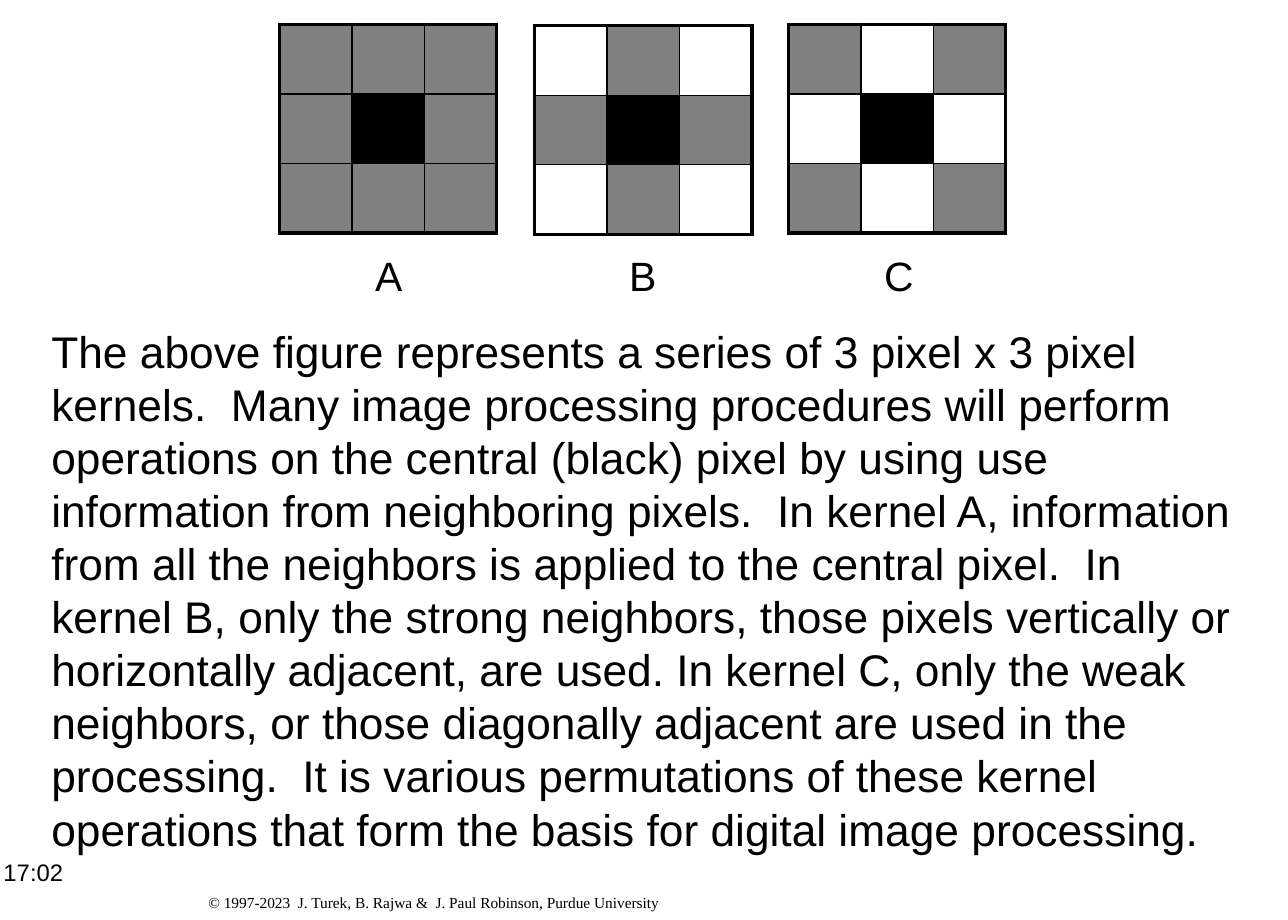
from lxml import etree
from pptx import Presentation
from pptx.dml.color import RGBColor
from pptx.enum.text import MSO_AUTO_SIZE
from pptx.oxml.ns import qn
from pptx.util import Emu, Pt

PX = 9144  # 100 px to the inch
FIT_SHAPE = MSO_AUTO_SIZE.SHAPE_TO_FIT_TEXT
BLACK, GRAY = "000000", "808080"
COLORS = {"K": BLACK, "G": GRAY, "-": None}
KERNEL_SIZE = (177, 170)
THICK, THIN = 2.25, 1

# Label, table position, label box, rows of pixels
KERNELS = [
    ("A", (228, 20), (296, 199, 42, 50), ["GGG", "GKG", "GGG"]),
    ("B", (436, 21), (503, 199, 42, 50), ["-G-", "GKG", "-G-"]),
    ("C", (643, 20), (711, 199, 44, 50), ["G-G", "-K-", "G-G"]),
]
EXPLANATION = (
    "The above figure represents a series of 3 pixel x 3 pixel kernels.  "
    "Many image processing procedures will perform operations on the central "
    "(black) pixel by using use information from neighboring pixels.  "
    "In kernel A, information from all the neighbors is applied to the central "
    "pixel.  In kernel B, only the strong neighbors, those pixels vertically or "
    "horizontally adjacent, are used. In kernel C, only the weak neighbors, or "
    "those diagonally adjacent are used in the processing.  It is various "
    "permutations of these kernel operations that form the basis for digital "
    "image processing."
)
COPYRIGHT = "© 1997-2023  J. Turek, B. Rajwa &  J. Paul Robinson, Purdue University"


def px(length):
    return Emu(length * PX)


def color(value):
    return RGBColor.from_string(value)


def add_text(slide, box, text, size, font="Arial", wrap=False):
    shape = slide.shapes.add_textbox(*map(px, box))
    frame = shape.text_frame
    frame.word_wrap = wrap
    frame.auto_size = FIT_SHAPE
    run = frame.paragraphs[0].add_run()
    run.text = text
    run.font.size = Pt(size)
    run.font.name = font
    run.font.color.rgb = color(BLACK)


def set_borders(cell, widths):
    """Put left, right, top and bottom lines before the fill of the cell."""
    properties = cell._tc.get_or_add_tcPr()
    for index, (side, width) in enumerate(widths.items()):
        line = etree.Element(qn(f"a:ln{side}"), w=str(Pt(width)))
        fill = etree.SubElement(line, qn("a:solidFill"))
        etree.SubElement(fill, qn("a:srgbClr"), val=BLACK)
        properties.insert(index, line)


def add_kernel(slide, box, pixels):
    """Add a square table whose equal cells fill the box."""
    count = len(pixels)
    last = count - 1
    frame = slide.shapes.add_table(count, count, *map(px, box))
    table = frame.table
    table.first_row = table.horz_banding = False
    for row, line in enumerate(pixels):
        for column, code in enumerate(line):
            cell = table.cell(row, column)
            if COLORS[code]:
                cell.fill.solid()
                cell.fill.fore_color.rgb = color(COLORS[code])
            else:
                cell.fill.background()
            edges = {"L": column == 0, "R": column == last,
                     "T": row == 0, "B": row == last}
            set_borders(cell, {side: THICK if outer else THIN
                               for side, outer in edges.items()})


def add_kernel_slide(presentation):
    slide = presentation.slides.add_slide(presentation.slide_layouts[6])
    add_text(slide, (160, 723, 392, 25), COPYRIGHT, 9, "Times New Roman")
    add_text(slide, (-7, 694, 119, 32), "17:02", 14, wrap=True)
    add_text(slide, (32, 259, 986, 444), EXPLANATION, 26, wrap=True)
    for label, position, label_box, pixels in KERNELS:
        add_kernel(slide, (*position, *KERNEL_SIZE), pixels)
        add_text(slide, label_box, label, 24)


def main():
    presentation = Presentation()
    presentation.slide_width = px(1050)
    presentation.slide_height = px(750)
    add_kernel_slide(presentation)
    presentation.save("out.pptx")


if __name__ == "__main__":
    main()
